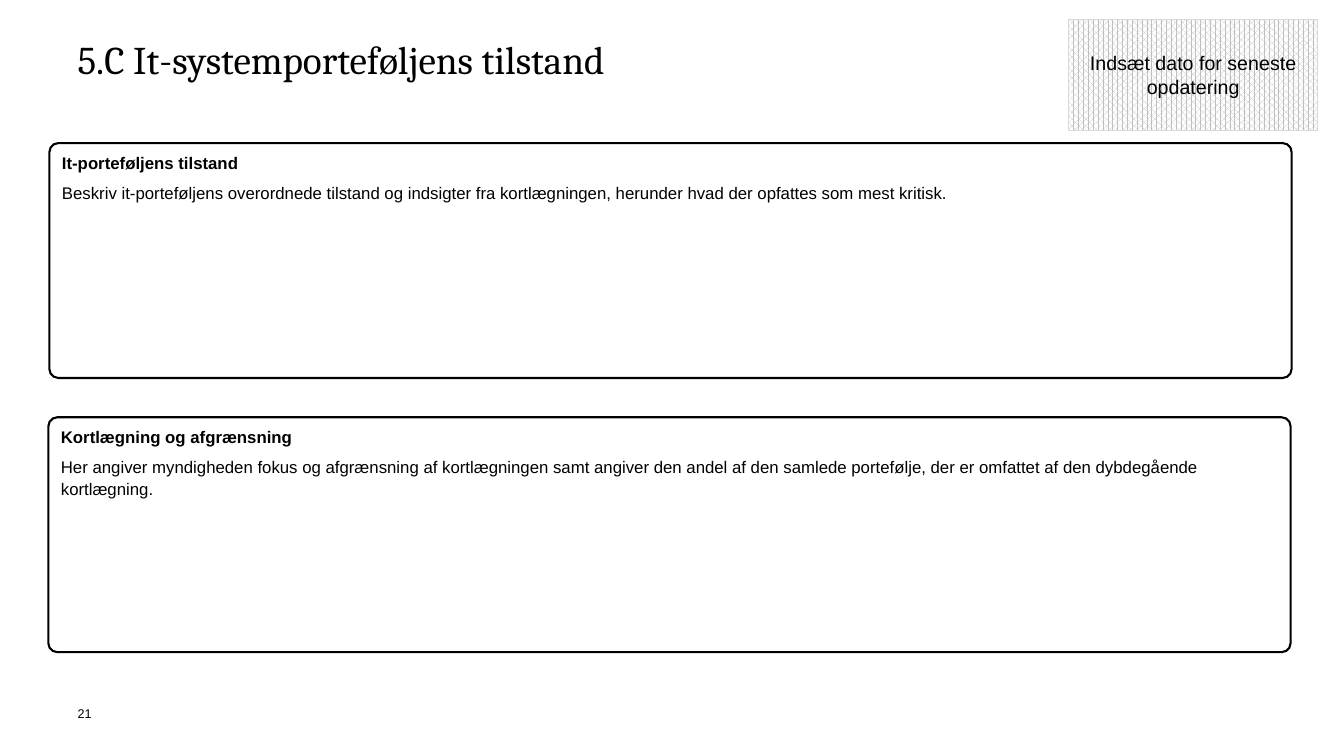
from pptx import Presentation
from pptx.dml.color import RGBColor
from pptx.enum.dml import MSO_PATTERN
from pptx.enum.shapes import MSO_SHAPE
from pptx.enum.text import MSO_ANCHOR, PP_ALIGN
from pptx.util import Inches, Pt

BLACK = RGBColor(0x00, 0x00, 0x00)
WHITE = RGBColor(0xFF, 0xFF, 0xFF)
PATTERN_GREY = RGBColor(0xBF, 0xBF, 0xBF)
BORDER_GREY = RGBColor(0xD9, 0xD9, 0xD9)

ROUNDED = MSO_SHAPE.ROUNDED_RECTANGLE
RECTANGLE = MSO_SHAPE.RECTANGLE
DOTTED = MSO_PATTERN.PERCENT_70
TOP, MIDDLE = MSO_ANCHOR.TOP, MSO_ANCHOR.MIDDLE
LEFT, CENTER = PP_ALIGN.LEFT, PP_ALIGN.CENTER

PANEL_WIDTH, PANEL_HEIGHT = 12.32, 2.33
PANELS = [
    (0.49, 1.42, "It-porteføljens tilstand",
     "Beskriv it-porteføljens overordnede tilstand og indsigter fra "
     "kortlægningen, herunder hvad der opfattes som mest kritisk."),
    (0.48, 4.14, "Kortlægning og afgrænsning",
     "Her angiver myndigheden fokus og afgrænsning af kortlægningen samt "
     "angiver den andel af den samlede portefølje, der er omfattet af den "
     "dybdegående kortlægning."),
]


def write(paragraph, text, size=12, font="Arial", bold=False, align=LEFT,
          line_spacing=1.0, space_before=0):
    paragraph.alignment = align
    paragraph.line_spacing = line_spacing
    paragraph.space_before = Pt(space_before)
    run = paragraph.add_run()
    run.text = text
    run.font.size = Pt(size)
    run.font.name = font
    run.font.bold = bold
    run.font.color.rgb = BLACK


def set_frame(frame, inset_x=0.1, inset_y=0.05, anchor=TOP):
    frame.word_wrap = True
    frame.vertical_anchor = anchor
    frame.margin_left = frame.margin_right = Inches(inset_x)
    frame.margin_top = frame.margin_bottom = Inches(inset_y)


def add_label(slide, left, top, width, height, text, **text_format):
    label = slide.shapes.add_textbox(
        Inches(left), Inches(top), Inches(width), Inches(height))
    set_frame(label.text_frame, 0, 0)
    write(label.text_frame.paragraphs[0], text, **text_format)


def add_box(slide, preset, left, top, width, height, border, border_width):
    box = slide.shapes.add_shape(
        preset, Inches(left), Inches(top), Inches(width), Inches(height))
    box.shadow.inherit = False
    box.fill.background()
    box.line.color.rgb = border
    box.line.width = Pt(border_width)
    return box


def add_panel(slide, left, top, heading, guidance):
    panel = add_box(slide, ROUNDED, left, top, PANEL_WIDTH, PANEL_HEIGHT,
                    BLACK, 1.5)
    panel.adjustments[0] = 0.038
    frame = panel.text_frame
    set_frame(frame)
    write(frame.paragraphs[0], heading, bold=True, line_spacing=1.08)
    write(frame.add_paragraph(), guidance, line_spacing=1.08, space_before=6)


def add_date_field(slide):
    date_field = add_box(slide, RECTANGLE, 10.6, 0.19, 2.47, 1.1,
                         BORDER_GREY, 0.5)
    date_field.fill.patterned()
    date_field.fill.pattern = DOTTED
    date_field.fill.fore_color.rgb = PATTERN_GREY
    date_field.fill.back_color.rgb = WHITE
    set_frame(date_field.text_frame, anchor=MIDDLE)
    write(date_field.text_frame.paragraphs[0],
          "Indsæt dato for seneste opdatering", size=14, align=CENTER)


def main():
    presentation = Presentation()
    presentation.slide_width = Inches(13.33)
    presentation.slide_height = Inches(7.5)
    slide = presentation.slides.add_slide(presentation.slide_layouts[6])

    # Page number and title
    add_label(slide, 0.77, 7, 0.31, 0.3, "21", size=9)
    add_label(slide, 0.77, 0.4, 11.8, 1.02,
              "5.C It-systemporteføljens tilstand",
              size=28, font="Cambria", line_spacing=0.9)

    # Panels to fill in
    for left, top, heading, guidance in PANELS:
        add_panel(slide, left, top, heading, guidance)

    # Date of the latest update
    add_date_field(slide)

    presentation.save("out.pptx")


if __name__ == "__main__":
    main()
